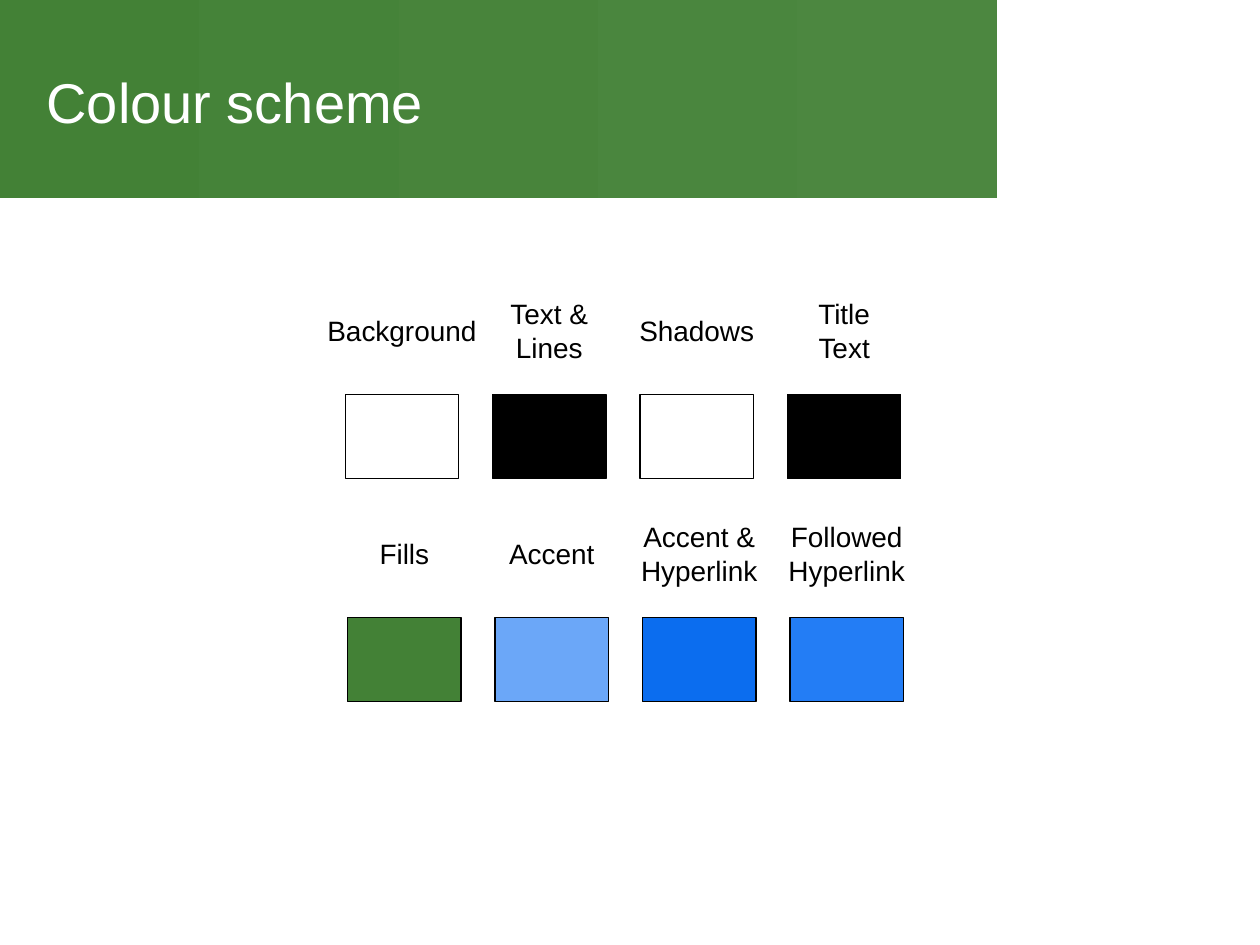
from pptx import Presentation
from pptx.dml.color import RGBColor
from pptx.enum.shapes import MSO_SHAPE
from pptx.enum.text import MSO_ANCHOR, PP_ALIGN
from pptx.util import Inches, Pt

RECT = MSO_SHAPE.RECTANGLE
MIDDLE = MSO_ANCHOR.MIDDLE
LEFT, CENTER = PP_ALIGN.LEFT, PP_ALIGN.CENTER

COLORS = {
    "white": "FFFFFF",
    "black": "000000",
    "green": "438136",
    "fade": "4C8740",
    "pale": "6BA7F8",
    "blue": "0B6DEF",
    "bright": "237DF5",
}

# A line feed starts a paragraph, a vertical tab breaks a line.
TOP_ROW = [("Background", "white"), ("Text &\nLines", "black"),
           ("Shadows", "white"), ("Title\vText", "black")]
LOW_ROW = [("Fills", "green"), ("Accent", "pale"),
           ("Accent &\nHyperlink", "blue"), ("Followed\nHyperlink", "bright")]

PITCH = 1.17
SWATCH_W, SWATCH_H = 0.9, 0.67
LABEL_W, LABEL_H = 1.2, 0.64
DROP = 0.83  # top of label to top of swatch


def rgb(name):
    return RGBColor.from_string(COLORS[name])


def add_text(slide, text, box, size, color, align, wrap):
    shape = slide.shapes.add_textbox(*map(Inches, box))
    frame = shape.text_frame
    frame.word_wrap = wrap
    frame.vertical_anchor = MIDDLE
    frame.text = text
    for para in frame.paragraphs:
        para.alignment = align
        para.font.name = "Arial"
        para.font.size = Pt(size)
        para.font.color.rgb = rgb(color)
    return frame


def add_rect(slide, box):
    shape = slide.shapes.add_shape(RECT, *map(Inches, box))
    shape.shadow.inherit = False
    return shape


def add_header(slide, x, y, w, h):
    band = add_rect(slide, (x, y, w, h))
    band.line.fill.background()
    band.fill.gradient()
    band.fill.gradient_angle = 0
    for stop, name in zip(band.fill.gradient_stops, ("green", "fade")):
        stop.color.rgb = rgb(name)
    add_text(slide, "Colour scheme", (x + 0.27, y + 0.3, w - 0.43, 1.01),
             32, "white", LEFT, True)


def add_row(slide, x, y, items):
    """Place labelled swatches, with x the left of the first swatch."""
    for i, (label, color) in enumerate(items):
        left = x + i * PITCH
        swatch = add_rect(slide, (left, y + DROP, SWATCH_W, SWATCH_H))
        swatch.fill.solid()
        swatch.fill.fore_color.rgb = rgb(color)
        swatch.line.color.rgb = rgb("black")
        swatch.line.width = Pt(0.75)
        inset = (SWATCH_W - LABEL_W) / 2
        frame = add_text(slide, label, (left + inset, y, LABEL_W, LABEL_H),
                         16, "black", CENTER, False)
        frame.margin_left = frame.margin_right = 0


def main():
    deck = Presentation()
    deck.slide_width, deck.slide_height = Inches(10), Inches(7.5)
    slide = deck.slides.add_slide(deck.slide_layouts[6])
    add_header(slide, 0, 0, 7.91, 1.57)
    add_row(slide, 2.74, 2.3, TOP_ROW)
    add_row(slide, 2.76, 4.07, LOW_ROW)
    deck.save("out.pptx")


if __name__ == "__main__":
    main()
